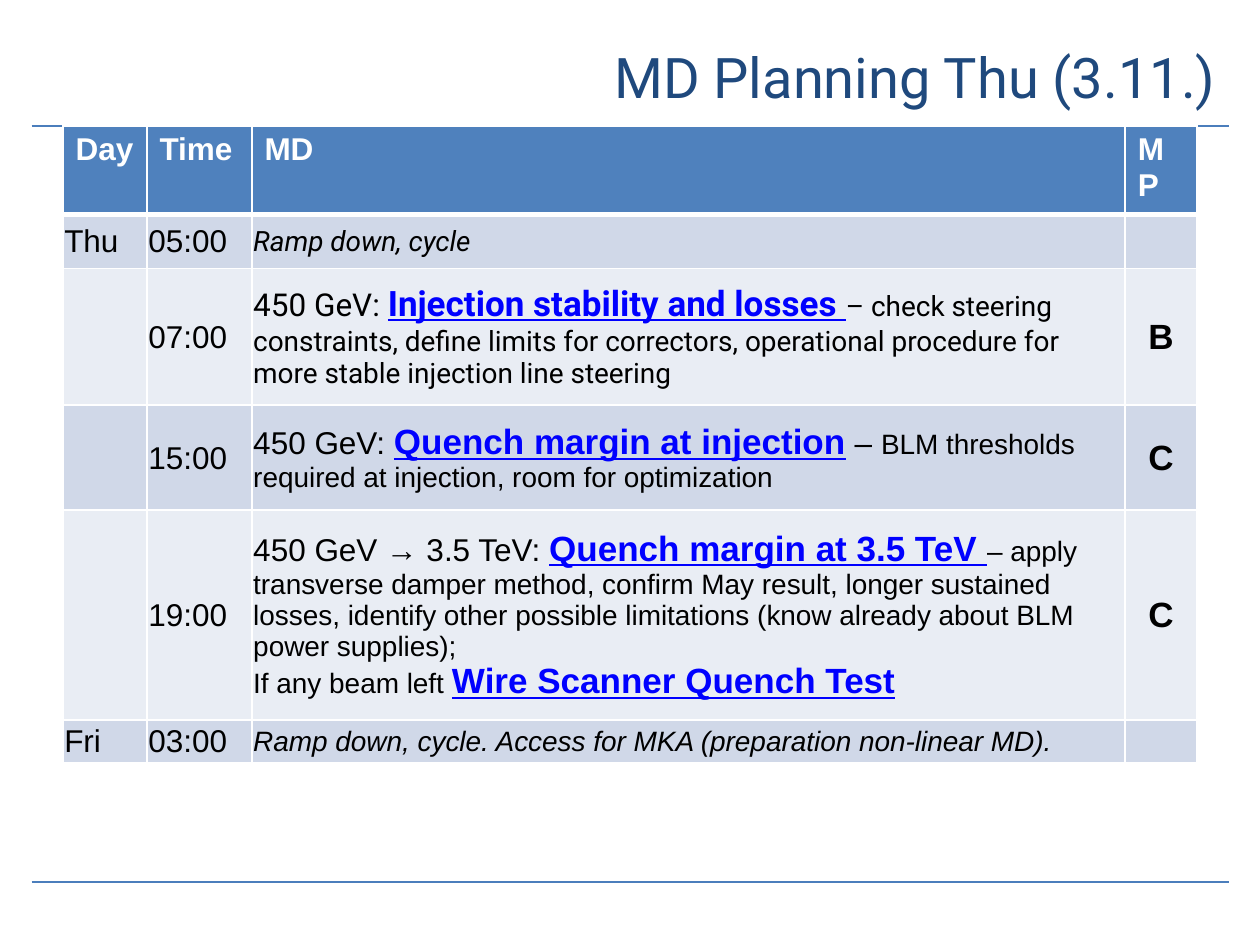
from dataclasses import dataclass

from lxml import etree
from pptx import Presentation
from pptx.dml.color import RGBColor
from pptx.enum.shapes import MSO_CONNECTOR
from pptx.enum.text import MSO_ANCHOR, PP_ALIGN
from pptx.oxml.ns import qn
from pptx.util import Pt

STRAIGHT = MSO_CONNECTOR.STRAIGHT
MIDDLE = MSO_ANCHOR.MIDDLE
LEFT, CENTER, RIGHT = PP_ALIGN.LEFT, PP_ALIGN.CENTER, PP_ALIGN.RIGHT


@dataclass(frozen=True)
class Theme:
    title: str = "1F497D"
    rule: str = "4B7EBC"
    header: str = "4F81BD"
    bands: tuple = ("D0D8E8", "E9EDF4")
    white: str = "FFFFFF"
    black: str = "000000"
    link: str = "0000FF"
    sans: str = "Arial"
    accent: str = "Roboto"
    title_size: int = 32
    link_size: int = 20
    label_size: int = 18
    note_size: int = 16


theme = Theme()

# Run styles: size, colour, bold, italic, underline
STYLES = {
    "title": (theme.title_size, theme.title, False, False, False),
    "header": (theme.label_size, theme.white, True, False, False),
    "label": (theme.label_size, theme.black, False, False, False),
    "note": (theme.note_size, theme.black, False, False, False),
    "cycle": (theme.note_size, theme.black, False, True, False),
    "link": (theme.link_size, theme.link, True, False, True),
    "period": (theme.link_size, theme.black, True, False, False),
}


def write_runs(paragraph, runs, font_name, alignment=LEFT):
    paragraph.alignment = alignment
    for text, style in runs:
        run = paragraph.add_run()
        run.text = text
        size, color, bold, italic, underline = STYLES[style]
        font = run.font
        font.name, font.size = font_name, Pt(size)
        font.bold, font.italic, font.underline = bold, italic, underline
        font.color.rgb = RGBColor.from_string(color)


def style_cell(cell, color, bottom_width):
    properties = cell._tc.get_or_add_tcPr()
    for side in "LRTB":
        width = bottom_width if side == "B" else 1
        line = etree.SubElement(properties, qn(f"a:ln{side}"), w=str(Pt(width)))
        fill = etree.SubElement(line, qn("a:solidFill"))
        etree.SubElement(fill, qn("a:srgbClr"), val=theme.white)
    cell.fill.solid()
    cell.fill.fore_color.rgb = RGBColor.from_string(color)


presentation = Presentation()
presentation.slide_width, presentation.slide_height = Pt(720), Pt(540)
slide = presentation.slides.add_slide(presentation.slide_layouts[6])

# Rules above and below the content
for y in (72, 504):
    rule = slide.shapes.add_connector(STRAIGHT, Pt(18), Pt(y), Pt(702), Pt(y))
    rule.line.color.rgb = RGBColor.from_string(theme.rule)
    rule.line.width = Pt(1.5)
    etree.SubElement(rule._element.spPr, qn("a:effectLst"))

# Title
title_box = slide.shapes.add_textbox(Pt(126), Pt(12.5), Pt(576), Pt(62.5))
title_frame = title_box.text_frame
title_frame.word_wrap = True
title_frame.vertical_anchor = MIDDLE
write_runs(title_frame.paragraphs[0], [("MD Planning Thu (3.11.)", "title")],
           theme.accent, RIGHT)

# Schedule: day, time, paragraphs of runs, machine period, description font
headers = ("Day", "Time", "MD", "MP")
schedule = [
    ("Thu", "05:00", [[("Ramp down, cycle", "cycle")]], "", theme.accent),
    ("", "07:00", [[
        ("450 GeV: ", "label"),
        ("Injection stability and losses ", "link"),
        ("– check steering constraints, define limits for correctors, "
         "operational procedure for more stable injection line steering", "note"),
    ]], "B", theme.accent),
    ("", "15:00", [[
        ("450 GeV: ", "label"),
        ("Quench margin at injection", "link"),
        (" – ", "label"),
        ("BLM thresholds required at injection, room for optimization", "note"),
    ]], "C", theme.sans),
    ("", "19:00", [
        [("450 GeV → 3.5 TeV: ", "label"),
         ("Quench margin at 3.5 TeV ", "link"),
         ("– apply transverse damper method, confirm May result, longer "
          "sustained losses, identify other possible limitations (know already "
          "about BLM power supplies);", "note")],
        [("If any beam left ", "note"), ("Wire Scanner Quench Test", "link")],
    ], "C", theme.sans),
    ("Fri", "03:00", [[
        ("Ramp down, cycle. Access for MKA (preparation non-linear MD).", "cycle"),
    ]], "", theme.sans),
]
column_widths = (48, 60, 499, 41)
row_heights = (29.5, 31, 78, 60, 120, 24.5)

# Table grid
table_frame = slide.shapes.add_table(
    len(row_heights), len(column_widths), Pt(36), Pt(72),
    Pt(sum(column_widths)), Pt(sum(row_heights)))
table = table_frame.table
table.horz_banding = False
for column, width in zip(table.columns, column_widths):
    column.width = Pt(width)
for row, height in zip(table.rows, row_heights):
    row.height = Pt(height)

# Header row
for column_index, header in enumerate(headers):
    cell = table.cell(0, column_index)
    style_cell(cell, theme.header, 3)
    write_runs(cell.text_frame.paragraphs[0], [(header, "header")], theme.sans)

# Schedule rows
for row_index, (day, time, description, period, font_name) in enumerate(schedule, 1):
    contents = (
        ([[(day, "label")]], theme.sans, LEFT),
        ([[(time, "label")]], theme.sans, LEFT),
        (description, font_name, LEFT),
        ([[(period, "period")]], theme.sans, CENTER),
    )
    for column_index, (paragraphs, cell_font, alignment) in enumerate(contents):
        cell = table.cell(row_index, column_index)
        style_cell(cell, theme.bands[(row_index - 1) % 2], 1)
        cell.vertical_anchor = MIDDLE
        cell.margin_left = cell.margin_right = cell.margin_top = Pt(0.75)
        cell.margin_bottom = Pt(0)
        if not paragraphs[0][0][0]:
            continue
        text_frame = cell.text_frame
        for index, runs in enumerate(paragraphs):
            paragraph = text_frame.add_paragraph() if index else text_frame.paragraphs[0]
            write_runs(paragraph, runs, cell_font, alignment)

presentation.save("out.pptx")
